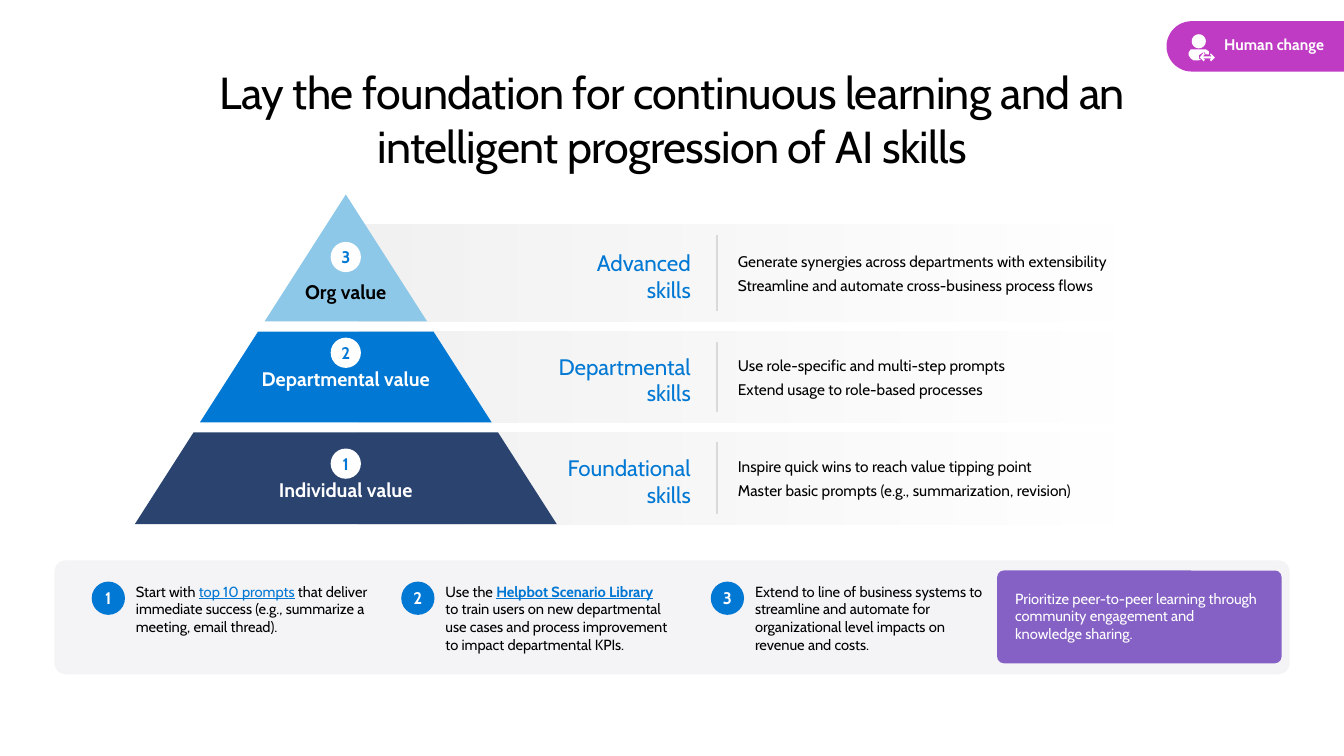
import math

import pptx
import pptx.dml.color
import pptx.enum.shapes
import pptx.enum.text
import pptx.oxml.ns
import pptx.util
from lxml import etree
from pptx.util import Inches

COLORS = {
    "white": "FFFFFF", "black": "000000", "blue": "0078D4", "link": "0077D3",
    "navy": "2A446F", "sky": "8DC8E8", "magenta": "C03BC4", "purple": "8661C5",
    "band": "F2F2F2", "panel": "F4F3F5", "divider": "D9D9D9",
}
FONT = "Cabin"
SHAPES = pptx.enum.shapes.MSO_SHAPE
ALIGN = pptx.enum.text.PP_ALIGN
ANCHOR = pptx.enum.text.MSO_ANCHOR

APEX_X, APEX_Y = 3.43, 1.93
HALF_WIDTH_PER_HEIGHT = 0.64

# pyramid top, band top, bottom, badge top, label top, fill, label colour, number,
# value label, skills label, benefits
LEVELS = [
    (4.29, 4.29, 5.2, 4.45, 4.69, "navy", "white", "1", "Individual value",
     "Foundational\vskills",
     "Inspire quick wins to reach value tipping point\n"
     "Master basic prompts (e.g., summarization, revision)"),
    (3.29, 3.29, 4.19, 3.35, 3.59, "blue", "white", "2", "Departmental value",
     "Departmental skills",
     "Use role-specific and multi-step prompts\n"
     "Extend usage to role-based processes"),
    (APEX_Y, 2.23, 3.19, 2.4, 2.73, "sky", "black", "3", "Org value",
     "Advanced\nskills",
     "Generate synergies across departments with extensibility\n"
     "Streamline and automate cross-business process flows"),
]

# Each step is a list of (text, is link, is bold)
STEPS = [
    [("Start with ", False, False), ("top 10 prompts", True, False),
     (" that deliver immediate success (e.g., summarize a meeting, email thread).",
      False, False)],
    [("Use the ", False, False), ("Helpbot Scenario Library", True, True),
     ("\v", False, False),
     ("to train users on new departmental use cases and process improvement "
      "to impact departmental KPIs.", False, False)],
    [("Extend to line of business systems to streamline and automate for "
      "organizational level impacts on revenue and costs.", False, False)],
]

PERSON_BODY = [
    (11.81, 0.49), (11.96, 0.49), (11.99, 0.51), (11.99, 0.54), (11.96, 0.54),
    (11.95, 0.52), (11.93, 0.52), (11.89, 0.55), (11.89, 0.58), (11.91, 0.59),
    (11.89, 0.6), (11.84, 0.6), (11.81, 0.58), (11.79, 0.55), (11.79, 0.52),
]
CHANGE_ARROW = [
    (12.01, 0.53), (12.05, 0.57), (12.01, 0.61), (12.0, 0.59), (12.02, 0.58),
    (11.93, 0.58), (11.95, 0.59), (11.94, 0.61), (11.9, 0.57), (11.94, 0.52),
    (11.95, 0.54), (11.93, 0.56), (12.02, 0.56), (12.0, 0.54),
]


def rgb(name):
    return pptx.dml.color.RGBColor.from_string(COLORS[name])


def paint(shape, color):
    shape.shadow.inherit = False
    shape.fill.solid()
    shape.fill.fore_color.rgb = rgb(color)
    shape.line.fill.background()


def add_box(slide, kind, box, color, adjustments=()):
    shape = slide.shapes.add_shape(kind, *map(Inches, box))
    for index, value in enumerate(adjustments):
        shape.adjustments[index] = value
    paint(shape, color)
    return shape


def add_outline(slide, contours, color):
    """Draw one filled shape from closed contours given in inches."""
    first, *others = [[(Inches(x), Inches(y)) for x, y in contour] for contour in contours]
    builder = slide.shapes.build_freeform(*first[0])
    builder.add_line_segments(first[1:], close=True)
    for contour in others:
        builder.move_to(*contour[0])
        builder.add_line_segments(contour[1:], close=True)
    paint(builder.convert_to_shape(), color)


def style_text(frame, size, color, bold=False, align=ALIGN.LEFT):
    for paragraph in frame.paragraphs:
        paragraph.alignment = align
        for run in paragraph.runs:
            run.font.name = FONT
            run.font.size = pptx.util.Pt(size)
            run.font.color.rgb = rgb(color)
            run.font.bold = bold
        for line_break in paragraph._p.findall(pptx.oxml.ns.qn("a:br")):
            etree.SubElement(line_break, pptx.oxml.ns.qn("a:rPr"), sz=str(int(size * 100)))


def set_margins(frame, margin):
    frame.margin_left = frame.margin_right = margin
    frame.margin_top = frame.margin_bottom = margin


def add_text(slide, box, text, size, color, bold=False, align=ALIGN.LEFT,
             anchor=ANCHOR.TOP):
    frame = slide.shapes.add_textbox(*map(Inches, box)).text_frame
    frame.word_wrap = True
    frame.vertical_anchor = anchor
    frame.text = text
    style_text(frame, size, color, bold, align)
    return frame


def add_badge(slide, left, top, size, number, fill, color):
    badge = add_box(slide, SHAPES.OVAL, (left, top, size, size), fill)
    frame = badge.text_frame
    set_margins(frame, 0)
    frame.word_wrap = False
    frame.vertical_anchor = ANCHOR.MIDDLE
    frame.text = number
    style_text(frame, 12, color, True, ALIGN.CENTER)


def add_band(slide, top, bottom):
    """Add a band that fades to transparent on the right."""
    band = add_box(slide, SHAPES.RECTANGLE, (3.56, top, 7.52, bottom - top), "band")
    band.fill.gradient()
    band.fill.gradient_angle = 0
    for stop, position in zip(band.fill.gradient_stops, (0, 1)):
        stop.color.rgb = rgb("band")
        stop.position = position
    last_color = list(band._element.iter(pptx.oxml.ns.qn("a:srgbClr")))[-1]
    etree.SubElement(last_color, pptx.oxml.ns.qn("a:alpha"), val="0")


def add_divider(slide, x, top, bottom):
    line = slide.shapes.add_connector(
        pptx.enum.shapes.MSO_CONNECTOR.STRAIGHT, *map(Inches, (x, top, x, bottom)))
    line.line.color.rgb = rgb("divider")
    line.line.width = pptx.util.Pt(1)
    etree.SubElement(line._element.spPr, pptx.oxml.ns.qn("a:effectLst"))


def add_level(slide, top, band_top, bottom, badge_top, label_top, fill, label_color,
              number, value, skills, benefits):
    add_band(slide, band_top, bottom)
    upper, lower = ((y - APEX_Y) * HALF_WIDTH_PER_HEIGHT for y in (top, bottom))
    corners = [(APEX_X - lower, bottom), (APEX_X - upper, top),
               (APEX_X + upper, top), (APEX_X + lower, bottom)]
    add_outline(slide, [corners], fill)
    add_badge(slide, APEX_X - 0.15, badge_top, 0.3, number, "white", "blue")
    add_text(slide, (2.4, label_top, 2.06, 0.34), value, 14, label_color, True,
             ALIGN.CENTER)
    middle = (band_top + bottom) / 2
    add_text(slide, (5.15, middle - 0.29, 1.8, 0.64), skills, 16, "blue",
             align=ALIGN.RIGHT)
    add_divider(slide, 7.11, band_top + 0.1, bottom - 0.1)
    frame = add_text(slide, (7.22, middle - 0.24, 4.38, 0.48), benefits, 11, "black",
                     anchor=ANCHOR.MIDDLE)
    for paragraph in frame.paragraphs:
        paragraph.space_after = pptx.util.Pt(4)


def add_step(slide, left, number, pieces):
    add_badge(slide, left, 5.77, 0.33, number, "blue", "white")
    frame = add_text(slide, (left + 0.34, 5.73, 2.53, 0.81), "", 10.5, "black")
    paragraph = frame.paragraphs[0]
    for text, _, _ in pieces:
        if text == "\v":
            paragraph.add_line_break()
        else:
            paragraph.add_run().text = text
    style_text(frame, 10.5, "black")
    run_pieces = [piece for piece in pieces if piece[0] != "\v"]
    for run, (_, is_link, is_bold) in zip(paragraph.runs, run_pieces):
        run.font.bold = is_bold
        if is_link:
            run.font.underline = True
            run.font.color.rgb = rgb("link")


def add_title(slide):
    frame = add_text(slide, (1.54, 0.64, 10.25, 1.08),
                     "Lay the foundation for continuous learning and an intelligent "
                     "progression of AI skills", 32, "black", align=ALIGN.CENTER)
    set_margins(frame, 0)
    frame.paragraphs[0].runs[0].font._element.set("spc", "-50")


def add_topic_tab(slide):
    tab = add_box(slide, SHAPES.ROUND_2_SAME_RECTANGLE, (12.2, -0.42, 0.5, 1.76),
                  "magenta", (0.5, 0))
    tab.rotation = 270
    turns = [math.tau * step / 24 for step in range(24)]
    head = [(11.89 + 0.07 * math.cos(turn), 0.41 + 0.07 * math.sin(turn)) for turn in turns]
    add_outline(slide, [PERSON_BODY, CHANGE_ARROW, head], "white")
    frame = add_text(slide, (12.14, 0.31, 1.19, 0.29), "Human change", 11, "white", True,
                     anchor=ANCHOR.MIDDLE)
    set_margins(frame, 0)
    frame.paragraphs[0].line_spacing = 0.9


def main():
    presentation = pptx.Presentation()
    presentation.slide_width = Inches(13.33)
    presentation.slide_height = Inches(7.5)
    slide = presentation.slides.add_slide(presentation.slide_layouts[6])
    add_title(slide)
    add_topic_tab(slide)
    for level in LEVELS:
        add_level(slide, *level)
    add_box(slide, SHAPES.ROUNDED_RECTANGLE, (0.54, 5.56, 12.25, 1.13), "panel", (0.1,))
    for index, pieces in enumerate(STEPS):
        add_step(slide, 0.91 + 3.07 * index, str(index + 1), pieces)
    add_box(slide, SHAPES.ROUNDED_RECTANGLE, (9.89, 5.66, 2.82, 0.92), "purple", (0.07,))
    add_text(slide, (9.97, 5.8, 2.65, 0.63),
             "Prioritize peer-to-peer learning through community engagement and "
             "knowledge sharing.", 10.5, "white")
    presentation.save("out.pptx")


if __name__ == "__main__":
    main()
